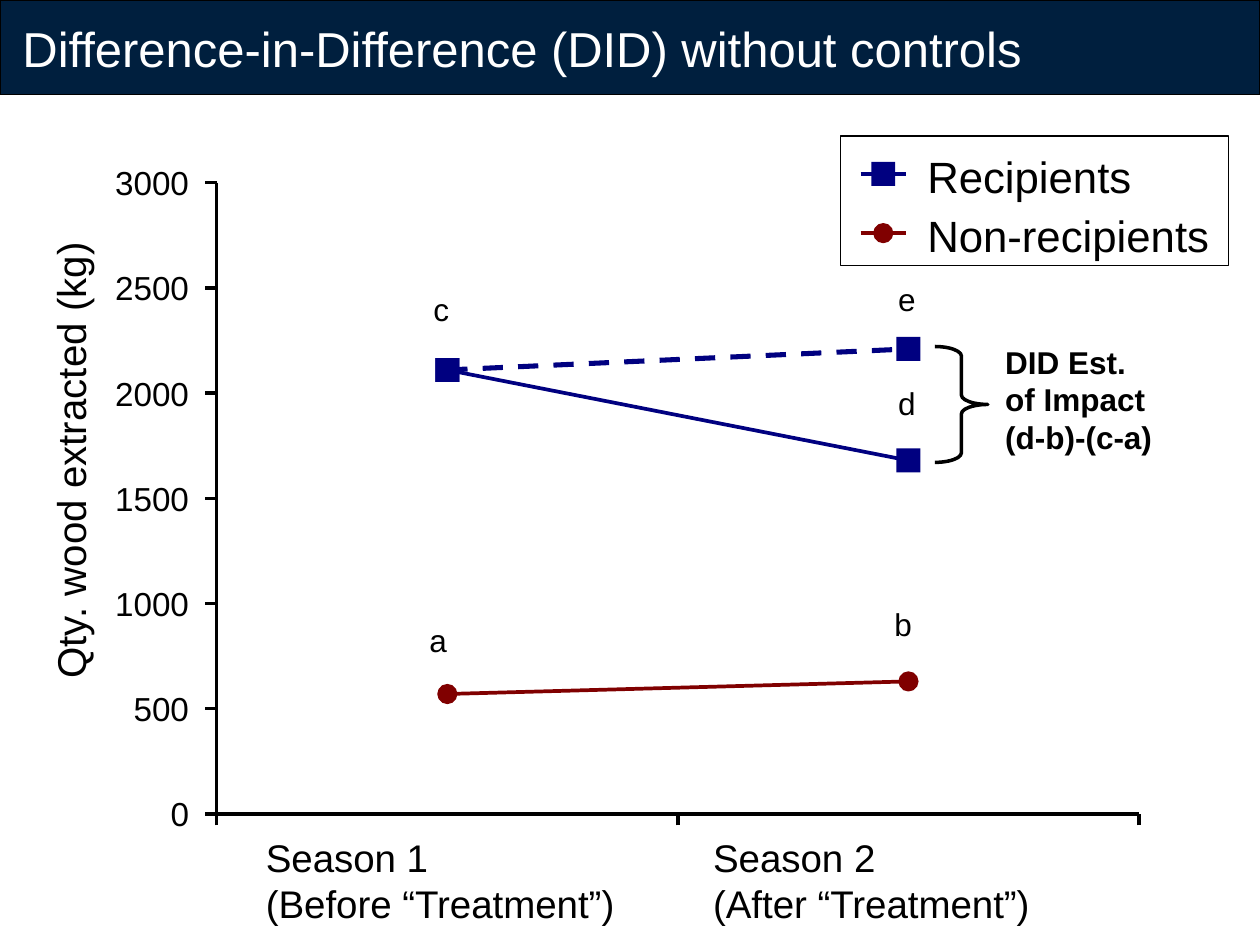
from dataclasses import dataclass

from lxml.etree import SubElement
from pptx import Presentation
from pptx.dml.color import RGBColor
from pptx.enum.dml import MSO_LINE
from pptx.enum.shapes import MSO_CONNECTOR, MSO_SHAPE
from pptx.enum.text import PP_ALIGN
from pptx.oxml.ns import qn
from pptx.util import Inches, Pt


@dataclass(frozen=True)
class Theme:
    font: str = "Arial"
    ink: str = "000000"
    paper: str = "FFFFFF"
    banner: str = "001F3E"
    recipients: str = "000080"
    others: str = "800000"
    title: int = 28
    legend: int = 25
    axis_title: int = 23
    season: int = 22
    tick: int = 19
    note: int = 18
    hairline: float = 0
    outline: float = 0.75
    axis: float = 2
    series: float = 2.13
    dashes: float = 2.9


THEME = Theme()

# The slide is a grid of 100 columns by 75 rows
COLUMNS, ROWS = 100, 75
CELL = Inches(0.1)

# Plot area in grid cells, and the value scale
LEFT, RIGHT, TOP, BOTTOM = 17.2, 90.4, 14.5, 64.6
TOP_VALUE, STEP = 3000, 500
BEFORE, AFTER = 0.25, 0.75


def cells(*counts):
    return [round(count * CELL) for count in counts]


def plot_point(share, value):
    """Grid place of a value at a share of the plot's width."""
    return (LEFT + share * (RIGHT - LEFT),
            BOTTOM - value / TOP_VALUE * (BOTTOM - TOP))


def add_line(page, start, end, color, width, dash=None):
    line = page.shapes.add_connector(
        MSO_CONNECTOR.STRAIGHT, *cells(*start, *end))
    line.line.color.rgb = RGBColor.from_string(color)
    line.line.width = Pt(width)
    if dash:
        line.line.dash_style = dash
    SubElement(line._element.spPr, qn("a:effectLst"))
    return line


def add_block(page, kind, area, fill=None, line=None, width=THEME.outline):
    block = page.shapes.add_shape(kind, *cells(*area))
    block.shadow.inherit = False
    if fill:
        block.fill.solid()
        block.fill.fore_color.rgb = RGBColor.from_string(fill)
    else:
        block.fill.background()
    if line:
        block.line.color.rgb = RGBColor.from_string(line)
        block.line.width = Pt(width)
    else:
        block.line.fill.background()
    return block


def add_marker(page, center, color):
    """Square for recipients, dot for non-recipients."""
    if color == THEME.recipients:
        kind, size, line = MSO_SHAPE.RECTANGLE, 1.9, None
    else:
        kind, size, line = MSO_SHAPE.OVAL, 1.5, color
    x, y = center
    add_block(page, kind, (x - size / 2, y - size / 2, size, size), color, line)


def add_text(page, area, lines, size, color=THEME.ink, bold=False,
             align=PP_ALIGN.LEFT, inset=False):
    box = page.shapes.add_textbox(*cells(*area))
    frame = box.text_frame
    frame.word_wrap = True
    if not inset:
        frame.margin_left = frame.margin_right = 0
        frame.margin_top = frame.margin_bottom = 0
    for index, words in enumerate(lines):
        para = frame.add_paragraph() if index else frame.paragraphs[0]
        para.alignment = align
        span = para.add_run()
        span.text = words
        span.font.name = THEME.font
        span.font.size = Pt(size)
        span.font.bold = bold
        span.font.color.rgb = RGBColor.from_string(color)
    return box


def add_axes(page):
    # Value axis with ticks and labels
    add_line(page, (LEFT, TOP), (LEFT, BOTTOM), THEME.ink, THEME.axis)
    for value in range(0, TOP_VALUE + 1, STEP):
        x, y = plot_point(0, value)
        add_line(page, (x - 0.9, y), (x, y), THEME.ink, THEME.hairline)
        add_text(page, (8, y - 1.6, 7, 3.7), [str(value)], THEME.tick,
                 align=PP_ALIGN.RIGHT)
    # Season axis with ticks and labels
    add_line(page, (LEFT, BOTTOM), (RIGHT, BOTTOM), THEME.ink, THEME.axis)
    for share in (0, 0.5, 1):
        x, y = plot_point(share, 0)
        add_line(page, (x, y + 0.9), (x, y), THEME.ink, THEME.hairline)
    for column, lines in ((21.1, ["Season 1", "(Before “Treatment”)"]),
                          (56.6, ["Season 2", "(After “Treatment”)"])):
        add_text(page, (column, 66.2, 30, 7.3), lines, THEME.season)
    # Value axis title, read upwards
    title = add_text(page, (-11.8, 34.6, 34.7, 3.8),
                     ["Qty. wood extracted (kg)"], THEME.axis_title)
    title.rotation = 270


def add_series(page, before, after, color, width=THEME.series, dash=None):
    start, end = plot_point(BEFORE, before), plot_point(AFTER, after)
    add_line(page, start, end, color, width, dash)
    for center in (start, end):
        add_marker(page, center, color)


def add_legend(page):
    add_block(page, MSO_SHAPE.RECTANGLE, (66.7, 10.8, 30.8, 10.3),
              THEME.paper, THEME.ink, THEME.hairline)
    entries = (("Recipients", THEME.recipients),
               ("Non-recipients", THEME.others))
    for index, (name, color) in enumerate(entries):
        y = 13.8 + 4.7 * index
        add_line(page, (68.3, y), (71.9, y), color, THEME.series)
        add_marker(page, (70.1, y), color)
        add_text(page, (73.6, y - 1.9, 25, 4.2), [name], THEME.legend)


def add_notes_on_plot(page):
    # Letters naming the points
    for letter, column, row in (("a", 33.1, 48.8), ("b", 70, 47.5),
                                ("c", 33.4, 22.5), ("d", 70.3, 30),
                                ("e", 70.3, 21.7)):
        add_text(page, (column, row, 3.9, 5), [letter], THEME.note, inset=True)
    # Brace and the estimate it marks
    brace = add_block(page, MSO_SHAPE.RIGHT_BRACE, (74.2, 27.5, 4.2, 9.2),
                      line=THEME.ink, width=THEME.axis)
    brace.adjustments[0] = 0.18
    add_text(page, (78.8, 26.7, 17.6, 13),
             ["DID Est.", "of Impact", "(d-b)-(c-a)"],
             THEME.note, bold=True, inset=True)


def main():
    deck = Presentation()
    deck.slide_width, deck.slide_height = cells(COLUMNS, ROWS)
    page = deck.slides.add_slide(deck.slide_layouts[6])

    # Title banner
    add_block(page, MSO_SHAPE.RECTANGLE, (0, 0, COLUMNS, 7.5),
              THEME.banner, THEME.ink)
    add_text(page, (0.8, 1, 97.2, 5.7),
             ["Difference-in-Difference (DID) without controls"],
             THEME.title, THEME.paper, inset=True)

    # Plot: the dashed series is the expected course without treatment
    add_axes(page)
    add_series(page, 2110, 2210, THEME.recipients, THEME.dashes, MSO_LINE.DASH)
    add_series(page, 2110, 1680, THEME.recipients)
    add_series(page, 570, 630, THEME.others)
    add_legend(page)
    add_notes_on_plot(page)

    deck.save("out.pptx")


if __name__ == "__main__":
    main()
